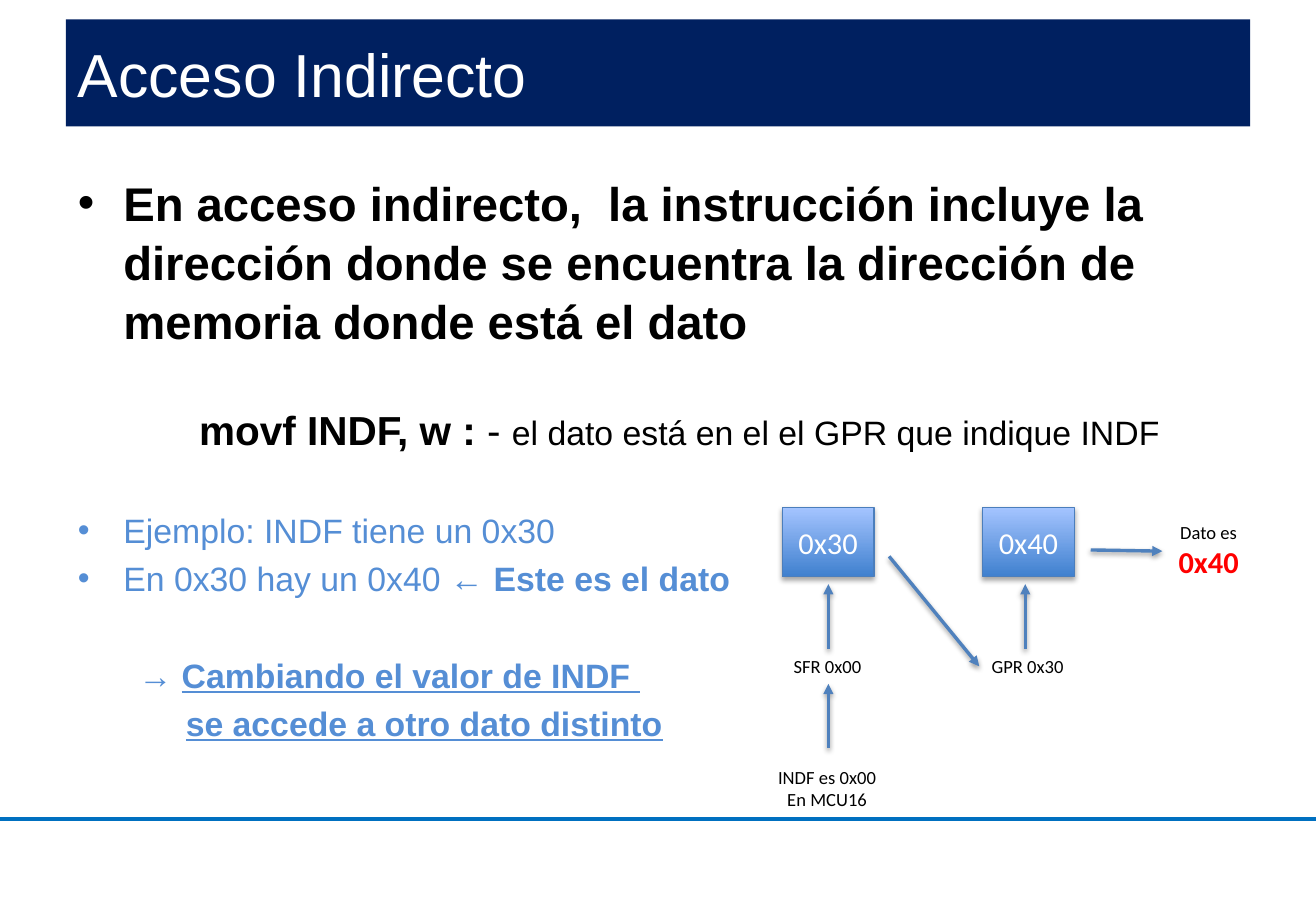
from dataclasses import dataclass

from lxml import etree
from pptx import Presentation
from pptx import util as u
from pptx.dml.color import RGBColor
from pptx.enum import shapes, text
from pptx.oxml import ns

Pt = u.Pt
NAVY, SKY, STEEL = "002060", "558ED5", "4F81BD"
BLACK, WHITE, RED = "000000", "FFFFFF", "FF0000"


@dataclass(frozen=True)
class Register:
    value: str
    left: float


@dataclass(frozen=True)
class Arrow:
    x1: float
    y1: float
    x2: float
    y2: float


@dataclass(frozen=True)
class Span:
    words: str
    size: float = 11
    color: str = BLACK
    bold: bool = False
    underline: bool = False


@dataclass(frozen=True)
class Label:
    left: float
    top: float
    width: float
    height: float
    lines: tuple[Span, ...]


@dataclass(frozen=True)
class BodyLine:
    spans: tuple[Span, ...]
    before: float = 0
    indent: float = 0
    bullet: bool = False
    spacing: float = 1.0


BULLET_INDENT = 27
GAP, SECTION_GAP = 4.6, 33.3
BODY = (
    BodyLine((Span("En acceso indirecto,  la instrucción incluye la dirección donde se "
                   "encuentra la dirección de memoria donde está el dato", 28, bold=True),),
             bullet=True, spacing=1.04),
    BodyLine((Span("movf INDF, w : ", 24, bold=True), Span("- ", 24),
              Span("el dato está en el el GPR que indique INDF", 20)),
             before=SECTION_GAP, indent=72),
    BodyLine((Span("Ejemplo: INDF tiene un 0x30", 20, SKY),), before=SECTION_GAP, bullet=True),
    BodyLine((Span("En 0x30 hay un 0x40 ← ", 20, SKY), Span("Este es el dato", 20, SKY, True)),
             before=GAP, bullet=True),
    BodyLine((Span("→ ", 20, SKY, True),
              Span("Cambiando el valor de INDF ", 20, SKY, True, True)),
             before=SECTION_GAP, indent=36),
    BodyLine((Span("se accede a otro dato distinto", 20, SKY, True, True),),
             before=GAP, indent=64),
)
REGISTERS = (Register("0x30", 463.6), Register("0x40", 582.4))
LABELS = (
    Label(463, 384.5, 55, 21, (Span("SFR 0x00"),)),
    Label(580.4, 384.5, 57.5, 21, (Span("GPR 0x30"),)),
    Label(453.5, 450.5, 73.5, 34, (Span("INDF es 0x00"), Span("En MCU16"))),
    Label(691.2, 305, 50.4, 42.5, (Span("Dato es"), Span("0x40", 18, RED, True))),
)
ARROWS = (
    Arrow(491, 443.3, 491, 405.4),
    Arrow(527, 329.8, 580.4, 395),
    Arrow(491, 384.5, 491, 346.3),
    Arrow(607.7, 384.5, 607.7, 346.3),
    Arrow(646.5, 326, 689, 326.7),
)


def rgb(color: str) -> RGBColor:
    return RGBColor.from_string(color)


def add_span(para, words: str, *, size: float, color: str, font: str,
             bold: bool = False, underline: bool = False) -> None:
    span = para.add_run()
    span.text = words
    span.font.size = Pt(size)
    span.font.name = font
    span.font.bold = bold
    span.font.underline = underline
    span.font.color.rgb = rgb(color)


def add_effects(shape, alpha: int = 0, distance: float = 0) -> None:
    """Give the shape a soft downward shadow, or none when alpha is 0."""
    effects = etree.SubElement(shape._element.spPr, ns.qn("a:effectLst"))
    if alpha:
        shadow = etree.SubElement(effects, ns.qn("a:outerShdw"), blurRad=str(Pt(3.1)),
                                  dist=str(Pt(distance)), dir="5400000", rotWithShape="0")
        tint = etree.SubElement(shadow, ns.qn("a:srgbClr"), val=BLACK)
        etree.SubElement(tint, ns.qn("a:alpha"), val=str(alpha * 1000))


def add_title(page, words: str) -> None:
    box = page.shapes.add_shape(shapes.MSO_SHAPE.RECTANGLE, Pt(39), Pt(11.5), Pt(702), Pt(63.5))
    box.shadow.inherit = False
    box.fill.solid()
    box.fill.fore_color.rgb = rgb(NAVY)
    box.line.fill.background()
    box.text_frame.vertical_anchor = text.MSO_ANCHOR.MIDDLE
    para = box.text_frame.paragraphs[0]
    para.alignment = text.PP_ALIGN.LEFT
    add_span(para, words, size=36, color=WHITE, font="Arial")


def add_body(page, lines: tuple[BodyLine, ...]) -> None:
    frame = page.shapes.add_textbox(Pt(39), Pt(98.3), Pt(702), Pt(400)).text_frame
    frame.word_wrap = True
    for index, line in enumerate(lines):
        para = frame.add_paragraph() if index else frame.paragraphs[0]
        para.line_spacing = line.spacing
        para.space_before = Pt(line.before)
        props = para._p.get_or_add_pPr()
        if line.bullet:
            props.set("marL", str(Pt(BULLET_INDENT)))
            props.set("indent", str(-Pt(BULLET_INDENT)))
            etree.SubElement(props, ns.qn("a:buFont"), typeface="Arial")
            etree.SubElement(props, ns.qn("a:buChar"), char="•")
        else:
            props.set("marL", str(Pt(line.indent)))
        for span in line.spans:
            add_span(para, span.words, size=span.size, color=span.color, font="Arial",
                     bold=span.bold, underline=span.underline)


def add_register(page, register: Register) -> None:
    box = page.shapes.add_shape(shapes.MSO_SHAPE.RECTANGLE, Pt(register.left), Pt(301),
                                Pt(54.4), Pt(41))
    box.fill.gradient()
    box.fill.gradient_angle = 90
    for stop, color in zip(box.fill.gradient_stops, ("3F80CE", "A4C4FF")):
        stop.color.rgb = rgb(color)
    box.line.color.rgb = rgb("4B7EBC")
    box.line.width = Pt(0.75)
    add_effects(box, alpha=35, distance=1.8)
    box.text_frame.vertical_anchor = text.MSO_ANCHOR.MIDDLE
    para = box.text_frame.paragraphs[0]
    para.alignment = text.PP_ALIGN.CENTER
    add_span(para, register.value, size=18, color=WHITE, font="Calibri")


def add_label(page, label: Label) -> None:
    frame = page.shapes.add_textbox(Pt(label.left), Pt(label.top),
                                    Pt(label.width), Pt(label.height)).text_frame
    frame.word_wrap = False
    for index, span in enumerate(label.lines):
        para = frame.add_paragraph() if index else frame.paragraphs[0]
        para.alignment = text.PP_ALIGN.CENTER
        add_span(para, span.words, size=span.size, color=span.color, font="Calibri",
                 bold=span.bold)


def add_line(page, ends: Arrow, color: str, width: float):
    line = page.shapes.add_connector(shapes.MSO_CONNECTOR.STRAIGHT, Pt(ends.x1), Pt(ends.y1),
                                     Pt(ends.x2), Pt(ends.y2))
    line.line.color.rgb = rgb(color)
    line.line.width = Pt(width)
    return line


def add_arrow(page, ends: Arrow) -> None:
    arrow = add_line(page, ends, STEEL, 2)
    etree.SubElement(arrow.line._get_or_add_ln(), ns.qn("a:tailEnd"), type="triangle")
    add_effects(arrow, alpha=38, distance=1.6)


def main() -> None:
    deck = Presentation()
    deck.slide_width, deck.slide_height = Pt(780), Pt(540)
    page = deck.slides.add_slide(deck.slide_layouts[6])
    add_title(page, "Acceso Indirecto")
    add_body(page, BODY)
    add_effects(add_line(page, Arrow(0, 485.3, 780, 485.3), "0070C0", 2.25))
    for register in REGISTERS:
        add_register(page, register)
    for label in LABELS:
        add_label(page, label)
    for arrow in ARROWS:
        add_arrow(page, arrow)
    deck.save("out.pptx")


if __name__ == "__main__":
    main()
